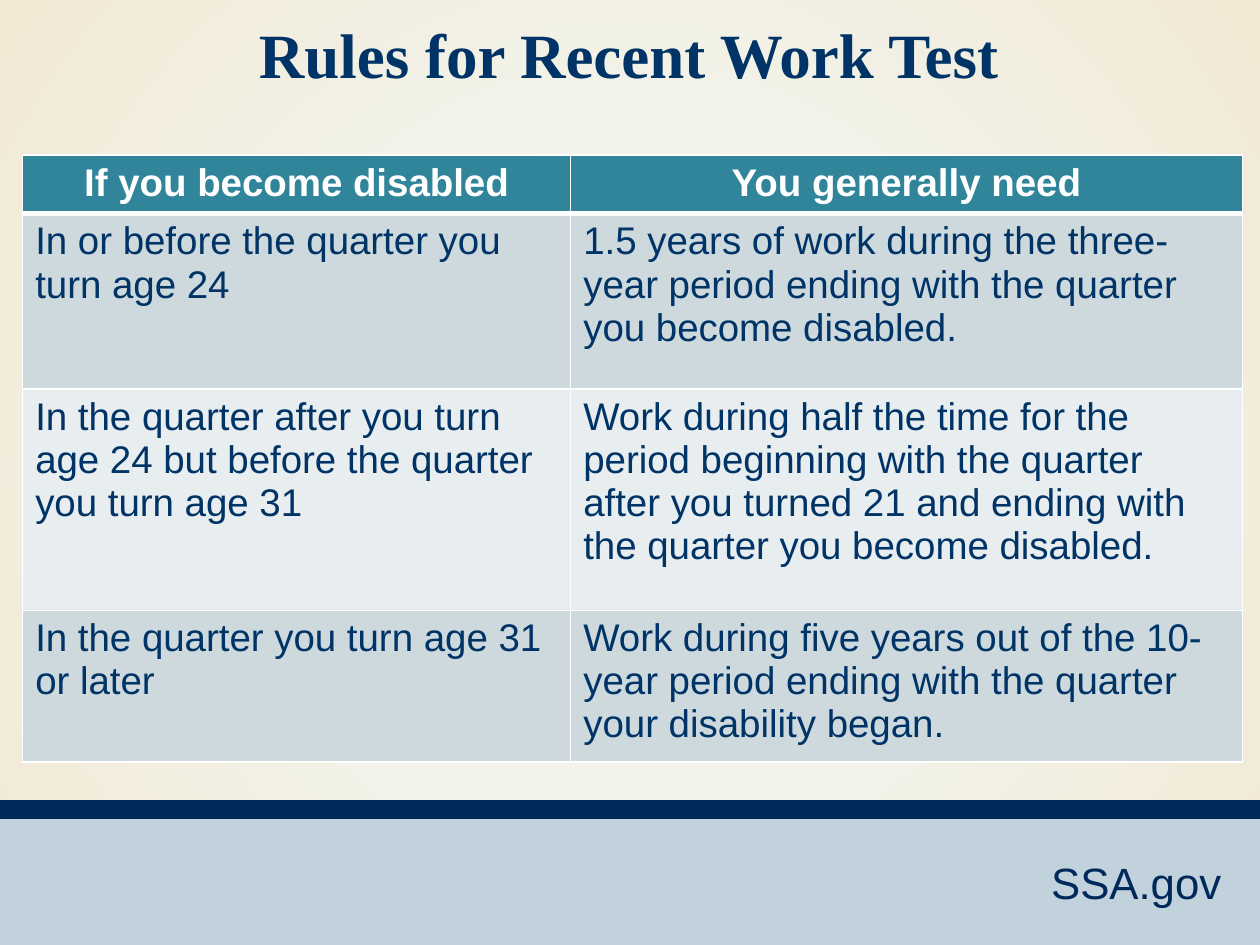
from dataclasses import dataclass

from lxml import etree
from pptx import Presentation
from pptx.dml.color import RGBColor
from pptx.enum.shapes import MSO_SHAPE
from pptx.enum.text import MSO_ANCHOR, PP_ALIGN
from pptx.oxml.ns import qn
from pptx.util import Inches, Pt

RECT = MSO_SHAPE.RECTANGLE
MIDDLE = MSO_ANCHOR.MIDDLE
LEFT, CENTER, RIGHT = PP_ALIGN.LEFT, PP_ALIGN.CENTER, PP_ALIGN.RIGHT


@dataclass(frozen=True)
class Theme:
    glow: str = "F3FAFB"
    sand: str = "F2E9D5"
    footer: str = "C1D2DC"
    navy: str = "00295B"
    text: str = "003366"
    header: str = "31859B"
    bands: tuple = ("CED9DE", "E8EDEF")
    white: str = "FFFFFF"
    title_font: str = "Times New Roman"
    body_font: str = "Arial"
    title_size: int = 36
    footer_size: int = 25
    table_size: int = 22


THEME = Theme()
COLUMNS = (4.35, 5.33)
ROW_HEIGHTS = (0.43, 1.39, 1.76, 1.13)
ROWS = (
    ("If you become disabled", "You generally need"),
    ("In or before the quarter you turn age 24",
     "1.5 years of work during the three-year period ending with the quarter "
     "you become disabled."),
    ("In the quarter after you turn age 24 but before the quarter you turn age 31",
     "Work during half the time for the period beginning with the quarter "
     "after you turned 21 and ending with the quarter you become disabled."),
    ("In the quarter you turn age 31 or later",
     "Work during five years out of the 10-year period ending with the quarter "
     "your disability began."),
)


def rgb(value):
    return RGBColor.from_string(value)


def write(tf, text, size, color, font, align, bold=False):
    tf.text = text
    tf.word_wrap = True
    p = tf.paragraphs[0]
    p.alignment = align
    f = p.runs[0].font
    f.size, f.name, f.bold = Pt(size), font, bold
    f.color.rgb = rgb(color)


def set_background(s):
    fill = s.background.fill
    fill.gradient()
    for stop, color in zip(fill.gradient_stops, (THEME.glow, THEME.sand)):
        stop.color.rgb = rgb(color)
    grad = s.element.find(".//" + qn("a:gradFill"))
    grad.remove(grad.find(qn("a:lin")))
    shade = etree.SubElement(grad, qn("a:path"), path="circle")
    etree.SubElement(shade, qn("a:fillToRect"),
                     dict.fromkeys("ltrb", "50000"))


def add_bar(s, top, height, color):
    sp = s.shapes.add_shape(RECT, 0, Inches(top), Inches(10), Inches(height))
    sp.shadow.inherit = False
    sp.fill.solid()
    sp.fill.fore_color.rgb = rgb(color)
    sp.line.fill.background()


def add_footer(s):
    add_bar(s, 6.45, 1.05, THEME.footer)
    add_bar(s, 6.35, 0.15, THEME.navy)
    sp = s.shapes.add_textbox(Inches(6.72), Inches(6.74), Inches(3.07), Inches(0.52))
    write(sp.text_frame, "SSA.gov", THEME.footer_size, THEME.navy,
          THEME.body_font, RIGHT)


def add_title(s):
    sp = s.shapes.title
    sp.left, sp.top = Inches(0), Inches(0.07)
    sp.width, sp.height = Inches(9.98), Inches(0.71)
    sp.text_frame.vertical_anchor = MIDDLE
    write(sp.text_frame, "Rules for Recent Work Test", THEME.title_size,
          THEME.text, THEME.title_font, CENTER, bold=True)


def set_border(cell, side, width):
    tc_pr = cell._tc.get_or_add_tcPr()
    ln = etree.SubElement(tc_pr, qn("a:ln" + side), w=str(Pt(width)))
    fill = etree.SubElement(ln, qn("a:solidFill"))
    etree.SubElement(fill, qn("a:srgbClr"), val=THEME.white)


def style_cell(cell, text, row):
    header = row == 0
    for side in "LRTB":
        thick = (header and side == "B") or (row == 1 and side == "T")
        set_border(cell, side, 3 if thick else 1)
    cell.fill.solid()
    cell.fill.fore_color.rgb = rgb(THEME.header if header else THEME.bands[(row - 1) % 2])
    write(cell.text_frame, text, THEME.table_size,
          THEME.white if header else THEME.text, THEME.body_font,
          CENTER if header else LEFT, bold=header)


def add_rules_table(s):
    frame = s.shapes.add_table(len(ROWS), len(COLUMNS), Inches(0.18), Inches(1.23),
                               Inches(sum(COLUMNS)), Inches(sum(ROW_HEIGHTS)))
    table = frame.table
    table.horz_banding = False
    for column, width in zip(table.columns, COLUMNS):
        column.width = Inches(width)
    for i, (height, texts) in enumerate(zip(ROW_HEIGHTS, ROWS)):
        table.rows[i].height = Inches(height)
        for j, text in enumerate(texts):
            style_cell(table.cell(i, j), text, i)


def main():
    prs = Presentation()
    prs.slide_width, prs.slide_height = Inches(10), Inches(7.5)
    s = prs.slides.add_slide(prs.slide_layouts[5])
    set_background(s)
    add_footer(s)
    add_title(s)
    add_rules_table(s)
    prs.save("out.pptx")


if __name__ == "__main__":
    main()
